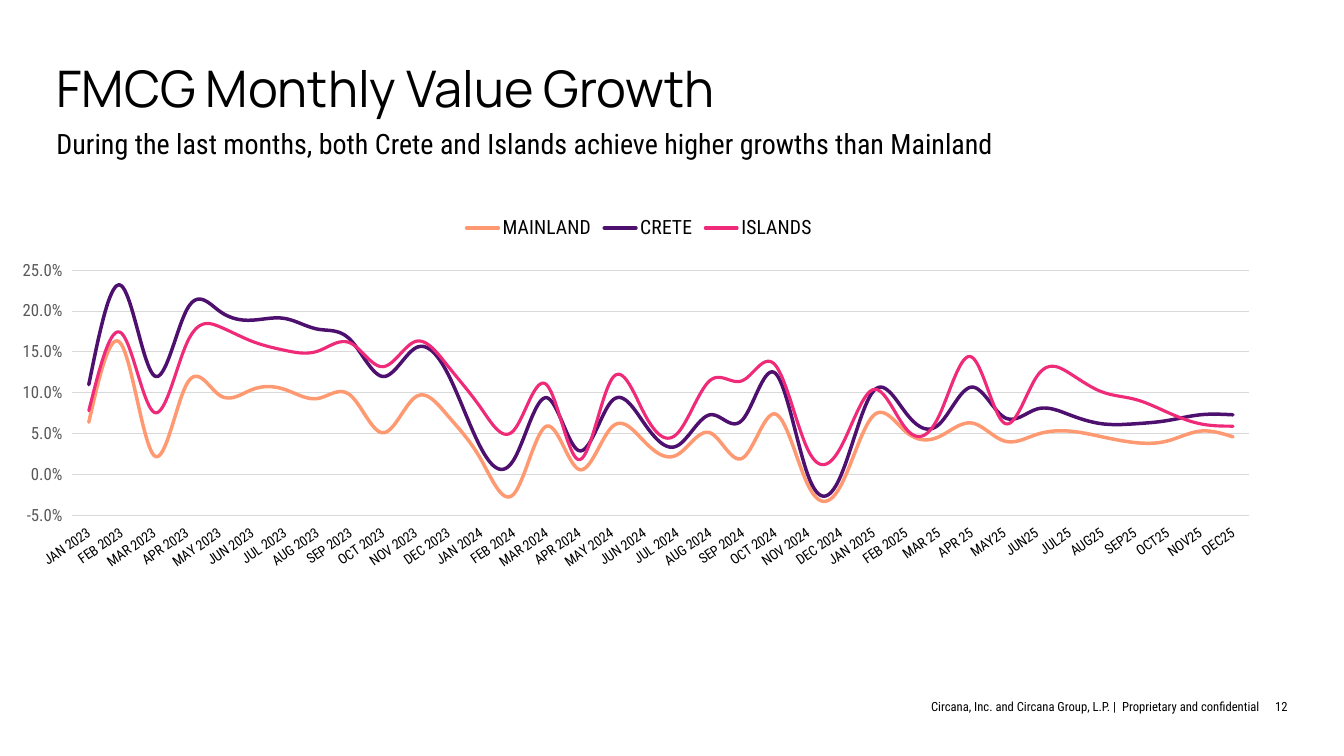
"""Build the slide on monthly value growth by region."""
from dataclasses import dataclass
from typing import Any

from lxml import etree
from pptx import Presentation
from pptx.chart.data import CategoryChartData
from pptx.dml.color import RGBColor
from pptx.enum.chart import XL_CHART_TYPE, XL_LEGEND_POSITION, XL_TICK_LABEL_POSITION, XL_TICK_MARK
from pptx.enum.text import MSO_ANCHOR, MSO_AUTO_SIZE, PP_ALIGN
from pptx.oxml import parse_xml
from pptx.oxml.ns import nsdecls, qn
from pptx.util import Inches, Pt

LINE_CHART = XL_CHART_TYPE.LINE
LEGEND_TOP = XL_LEGEND_POSITION.TOP
LABELS_LOW = XL_TICK_LABEL_POSITION.LOW
TICK_NONE, TICK_OUTSIDE = XL_TICK_MARK.NONE, XL_TICK_MARK.OUTSIDE
TOP, BOTTOM = MSO_ANCHOR.TOP, MSO_ANCHOR.BOTTOM
LEFT, RIGHT = PP_ALIGN.LEFT, PP_ALIGN.RIGHT
FIT_NONE = MSO_AUTO_SIZE.NONE

COLOURS = {
    "text": "000000", "axis": "595959", "grid": "D9D9D9",
    "mainland": "FF9971", "crete": "4E106F", "islands": "EF2A79",
}
HEADING_FONT, BODY_FONT = "Manrope", "Roboto Condensed"
MONTHS = ["JAN", "FEB", "MAR", "APR", "MAY", "JUN", "JUL", "AUG", "SEP", "OCT", "NOV", "DEC"]
YEAR_SUFFIXES = [" 2023"] * 12 + [" 2024"] * 12 + [" 2025"] * 2 + [" 25"] * 2 + ["25"] * 8
PLOT_AREA = {"x": 0.043, "y": 0.176, "w": 0.949, "h": 0.655}
MONTH_LABEL_DEGREES = -35


@dataclass(frozen=True)
class TextBlock:
    """Wording, place and format of one text."""
    text: str
    place: tuple[float, float, float, float]
    size: float
    font: str = BODY_FONT
    anchor: Any = TOP
    paragraph_format: tuple[tuple[str, Any], ...] = ()


@dataclass(frozen=True)
class Region:
    """One line of the chart, with growth in percent."""
    name: str
    colour: str
    width: float
    growth: tuple[float, ...]


TITLE = TextBlock("FMCG Monthly Value Growth", (0.56, 0.63, 12.23, 0.6), 36, HEADING_FONT,
                  paragraph_format=(("alignment", LEFT), ("line_spacing", 0.9)))
SUBTITLE = TextBlock(
    "During the last months, both Crete and Islands achieve higher growths than Mainland",
    (0.56, 1.29, 12.23, 0.5), 20,
    paragraph_format=(("line_spacing", 0.9), ("space_before", Pt(0)), ("space_after", Pt(14))))
FOOTERS = [
    TextBlock("Circana, Inc. and Circana Group, L.P. |  Proprietary and confidential",
              (8.29, 6.89, 4.2, 0.2), 9, anchor=BOTTOM,
              paragraph_format=(("alignment", RIGHT), ("line_spacing", 0.9))),
    TextBlock("12", (12.57, 6.9, 0.2, 0.18), 9, anchor=BOTTOM,
              paragraph_format=(("alignment", RIGHT),)),
]
REGIONS = [
    Region("MAINLAND", "mainland", 2.5, (
        6.4, 15.9, 2.3, 11.1, 9.7, 10.4, 10.4, 9.3, 9.7, 5.1, 9.5, 7.1,
        1.8, -2.4, 5.9, 0.6, 5.8, 4.0, 2.4, 5.1, 2.0, 7.4, -1.3, -1.4,
        7.2, 5.2, 4.6, 6.3, 4.1, 4.9, 5.3, 4.6, 3.9, 4.1, 5.3, 4.6)),
    Region("CRETE", "crete", 2.5, (
        11.0, 23.1, 12.1, 20.2, 20.0, 18.9, 19.1, 17.8, 16.5, 12.0, 15.5, 12.2,
        3.2, 1.8, 9.4, 2.9, 9.0, 6.2, 3.5, 7.3, 6.7, 12.4, -0.1, -0.2,
        10.2, 7.5, 6.1, 10.7, 7.0, 8.0, 7.3, 6.2, 6.2, 6.6, 7.3, 7.3)),
    Region("ISLANDS", "islands", 2.25, (
        7.8, 17.3, 7.6, 16.1, 18.1, 16.3, 15.2, 15.1, 16.1, 13.2, 16.3, 13.2,
        8.1, 5.4, 11.0, 1.8, 11.7, 7.4, 5.0, 11.5, 11.5, 13.4, 3.0, 3.3,
        10.4, 5.6, 7.1, 14.4, 6.3, 12.0, 12.4, 10.1, 9.2, 7.6, 6.2, 5.9)),
]


def set_values(target: Any, values: dict[str, Any]) -> None:
    """Set each named attribute of the target."""
    for name, value in values.items():
        setattr(target, name, value)


def set_font(font: Any, size: float, name: str = BODY_FONT, colour: str = "text") -> None:
    """Give a font its face, size and colour."""
    set_values(font, {"name": name, "size": Pt(size), "bold": False})
    font.color.rgb = RGBColor.from_string(COLOURS[colour])


def set_line(line: Any, colour: str, width: float) -> None:
    """Give a line its colour and width."""
    line.color.rgb = RGBColor.from_string(COLOURS[colour])
    line.width = Pt(width)


def write_text(box: Any, block: TextBlock) -> None:
    """Place a box and write its text."""
    places = (Inches(length) for length in block.place)
    set_values(box, dict(zip(("left", "top", "width", "height"), places)))
    frame = box.text_frame
    set_values(frame, {
        "word_wrap": True, "auto_size": FIT_NONE, "vertical_anchor": block.anchor,
        "margin_left": 0, "margin_top": 0, "margin_right": 0, "margin_bottom": 0,
    })
    para = frame.paragraphs[0]
    set_values(para, dict(block.paragraph_format))
    span = para.add_run()
    span.text = block.text
    set_font(span.font, block.size, block.font)


def remove_bullet(para: Any) -> None:
    """Take the bullet and its indent off a paragraph."""
    properties = para._p.get_or_add_pPr()
    properties.set("marL", "0")
    properties.set("indent", "0")
    etree.SubElement(properties, qn("a:buNone"))


def set_plot_area(chart: Any) -> None:
    """Fix the inner plot area as fractions of the chart."""
    modes = '<c:layoutTarget val="inner"/><c:xMode val="edge"/><c:yMode val="edge"/>'
    sizes = "".join(f'<c:{key} val="{value}"/>' for key, value in PLOT_AREA.items())
    plot_area = chart._chartSpace.chart.plotArea
    for layout in plot_area.findall(qn("c:layout")):
        plot_area.remove(layout)
    plot_area.insert(0, parse_xml(
        f'<c:layout {nsdecls("c")}><c:manualLayout>{modes}{sizes}</c:manualLayout></c:layout>'))


def format_axes(chart: Any) -> None:
    """Format the month axis and the growth axis."""
    months, growth = chart.category_axis, chart.value_axis
    set_values(months, {"tick_label_position": LABELS_LOW, "major_tick_mark": TICK_NONE,
                        "minor_tick_mark": TICK_NONE, "has_major_gridlines": False})
    set_font(months.tick_labels.font, 10)
    label_body = months._element.find(qn("c:txPr")).find(qn("a:bodyPr"))
    label_body.set("rot", str(MONTH_LABEL_DEGREES * 60000))
    set_line(months.format.line, "grid", 0.75)
    set_values(growth, {"minimum_scale": -0.05, "maximum_scale": 0.25, "major_unit": 0.05,
                        "major_tick_mark": TICK_OUTSIDE, "minor_tick_mark": TICK_NONE,
                        "has_major_gridlines": True})
    set_values(growth.tick_labels, {"number_format": "0.0%", "number_format_is_linked": False})
    set_font(growth.tick_labels.font, 12, colour="axis")
    growth.format.line.fill.background()
    set_line(growth.major_gridlines.format.line, "grid", 0.75)


def add_growth_chart(page: Any) -> None:
    """Add the line chart of monthly growth."""
    data = CategoryChartData(number_format="0.0%")
    data.categories = [MONTHS[index % 12] + suffix for index, suffix in enumerate(YEAR_SUFFIXES)]
    for region in REGIONS:
        data.add_series(region.name, [round(value / 100, 3) for value in region.growth])
    chart = page.shapes.add_chart(
        LINE_CHART, Inches(0.19), Inches(2.03), Inches(12.3), Inches(3.71), data).chart
    set_font(chart.font, 12)
    set_values(chart, {"has_title": False, "has_legend": True})
    set_values(chart.legend, {"position": LEGEND_TOP, "include_in_layout": False})
    set_font(chart.legend.font, 14)
    chart.plots[0].vary_by_categories = False
    for series, region in zip(chart.plots[0].series, REGIONS):
        series.smooth = True
        set_line(series.format.line, region.colour, region.width)
        series.format.line._ln.set("cap", "rnd")
    format_axes(chart)
    set_plot_area(chart)


def main() -> None:
    """Build and save the deck."""
    deck = Presentation()
    set_values(deck, {"slide_width": Inches(13.33), "slide_height": Inches(7.5)})
    page = deck.slides.add_slide(deck.slide_layouts[1])
    subtitle = page.placeholders[1]
    remove_bullet(subtitle.text_frame.paragraphs[0])
    write_text(page.shapes.title, TITLE)
    write_text(subtitle, SUBTITLE)
    add_growth_chart(page)
    for footer in FOOTERS:
        write_text(page.shapes.add_textbox(0, 0, 0, 0), footer)
    deck.save("out.pptx")


if __name__ == "__main__":
    main()
